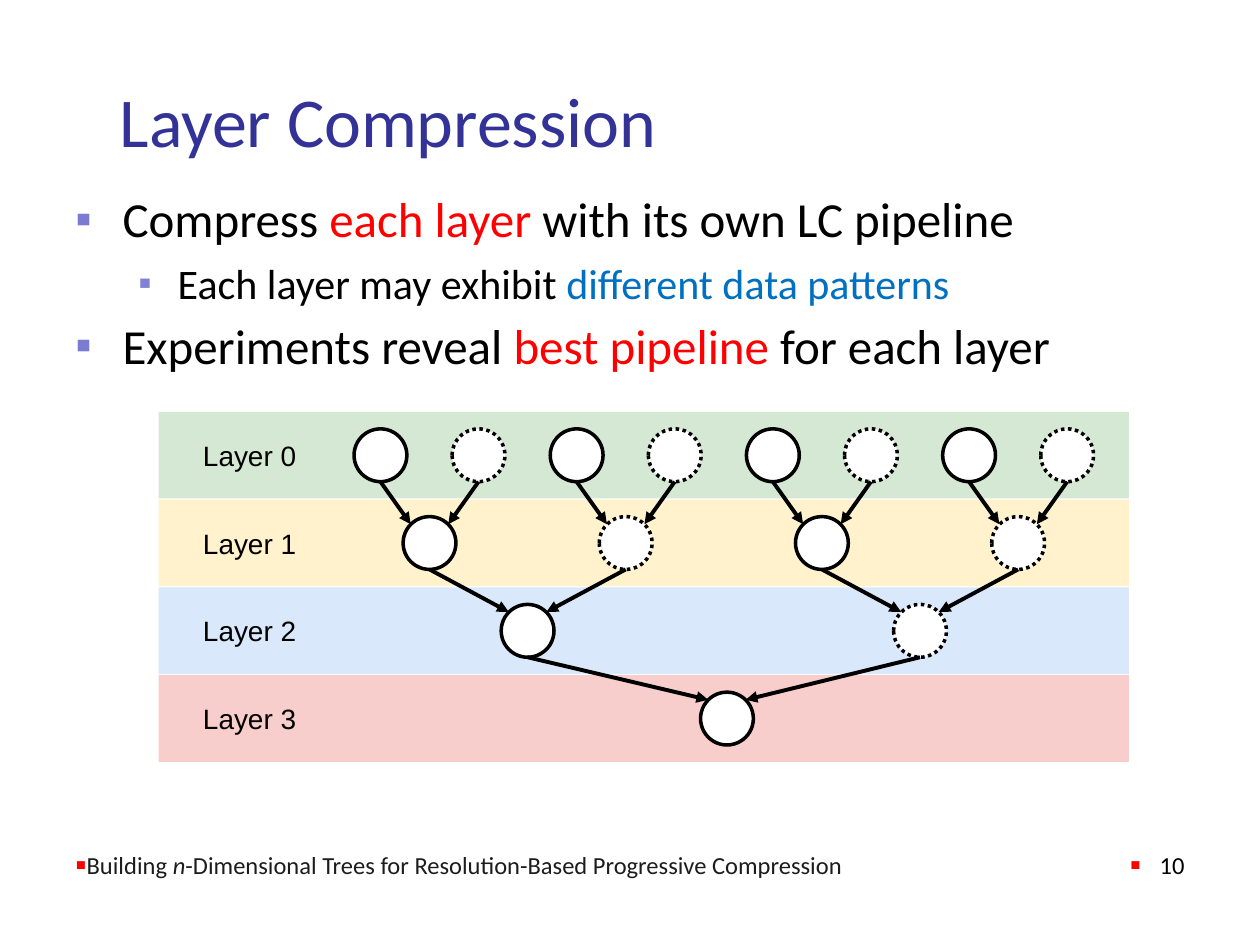
from dataclasses import dataclass

from lxml import etree
from pptx import Presentation
from pptx import util as u
from pptx.dml.color import RGBColor
from pptx.enum import dml, shapes, text
from pptx.oxml import ns
from pptx.slide import Slide

BLACK = RGBColor(0x00, 0x00, 0x00)
WHITE = RGBColor(0xFF, 0xFF, 0xFF)
INDIGO = RGBColor(0x33, 0x33, 0x97)
RED = RGBColor(0xFF, 0x00, 0x00)
BLUE = RGBColor(0x00, 0x70, 0xC0)
CHARCOAL = RGBColor(0x1C, 0x1C, 0x1C)
LAVENDER = RGBColor(0x7B, 0x7B, 0xD1)
LIGHT_LAVENDER = RGBColor(0x82, 0x82, 0xD4)
BAND_COLORS = (
    RGBColor(0xD5, 0xE8, 0xD4),
    RGBColor(0xFF, 0xF2, 0xCC),
    RGBColor(0xDA, 0xE8, 0xFC),
    RGBColor(0xF8, 0xCE, 0xCC),
)

BAND_LEFT, BAND_TOP, BAND_WIDTH, BAND_HEIGHT = 90.7, 235.4, 554.4, 49.5
BAND_PITCH = 50.16
LABEL_LEFT, LABEL_WIDTH = 96.5, 92.2
DIAMETER = 30.2
LEAF_COUNT, FIRST_LEAF, LEAF_PITCH = 8, 217.4, 56.06
ROOT_SHIFT = 1.8


@dataclass
class Canvas:
    slide: Slide
    font: str = "Calibri"
    label_font: str = "Arial"
    outline: float = 2
    arrow: float = 2.25

    def band(self, top, color):
        shape = self.slide.shapes.add_shape(
            shapes.MSO_SHAPE.RECTANGLE,
            u.Pt(BAND_LEFT), u.Pt(top), u.Pt(BAND_WIDTH), u.Pt(BAND_HEIGHT))
        shape.shadow.inherit = False
        shape.fill.solid()
        shape.fill.fore_color.rgb = color
        shape.line.fill.background()

    def node(self, x, y, dotted):
        """Draw a circle centred on (x, y)."""
        shape = self.slide.shapes.add_shape(
            shapes.MSO_SHAPE.OVAL, u.Pt(x - DIAMETER / 2),
            u.Pt(y - DIAMETER / 2), u.Pt(DIAMETER), u.Pt(DIAMETER))
        shape.shadow.inherit = False
        shape.fill.solid()
        shape.fill.fore_color.rgb = WHITE
        shape.line.color.rgb = BLACK
        shape.line.width = u.Pt(self.outline)
        if dotted:
            shape.line.dash_style = dml.MSO_LINE.ROUND_DOT

    def edge(self, child, parent):
        """Draw an arrow from the bottom of a child to its parent's upper rim."""
        side = 1 if child[0] > parent[0] else -1
        diagonal = DIAMETER / 2 * 0.71
        connector = self.slide.shapes.add_connector(
            shapes.MSO_CONNECTOR.STRAIGHT,
            u.Pt(child[0]), u.Pt(child[1] + DIAMETER / 2),
            u.Pt(parent[0] + side * diagonal), u.Pt(parent[1] - diagonal))
        connector.line.color.rgb = BLACK
        connector.line.width = u.Pt(self.arrow)
        properties = connector._element.spPr
        line = properties.find(ns.qn("a:ln"))
        etree.SubElement(line, ns.qn("a:tailEnd"), type="triangle")
        etree.SubElement(properties, ns.qn("a:effectLst"))

    def text_box(self, left, top, width, height, anchor):
        frame = self.slide.shapes.add_textbox(
            u.Pt(left), u.Pt(top), u.Pt(width), u.Pt(height)).text_frame
        frame.word_wrap = True
        frame.vertical_anchor = anchor
        return frame

    def add_runs(self, paragraph, size, *pieces, font=None):
        """Fill a paragraph with (wording, color) pieces."""
        for wording, color in pieces:
            run = paragraph.add_run()
            run.text = wording
            run.font.name = font or self.font
            run.font.size = u.Pt(size)
            run.font.color.rgb = color

    def bullet(self, paragraph, color, percent, margin=0, hanging=0):
        properties = paragraph._p.get_or_add_pPr()
        properties.set("marL", str(u.Pt(margin)))
        properties.set("indent", str(-u.Pt(hanging)))
        fill = etree.SubElement(properties, ns.qn("a:buClr"))
        etree.SubElement(fill, ns.qn("a:srgbClr"), val=str(color))
        etree.SubElement(properties, ns.qn("a:buSzPct"), val=str(percent * 1000))
        etree.SubElement(properties, ns.qn("a:buFont"), typeface=self.label_font)
        etree.SubElement(properties, ns.qn("a:buChar"), char="▪")


def tree_levels():
    """Return node centres per layer, each parent midway between its children."""
    xs = [FIRST_LEAF + i * LEAF_PITCH for i in range(LEAF_COUNT)]
    levels = []
    for layer in range(len(BAND_COLORS)):
        y = BAND_TOP + layer * BAND_PITCH + BAND_HEIGHT / 2
        shift = ROOT_SHIFT if len(xs) == 1 else 0
        levels.append([(x + shift, y) for x in xs])
        xs = [(a + b) / 2 for a, b in zip(xs[::2], xs[1::2])]
    return levels


def add_texts(canvas):
    title = canvas.text_box(36, 43.2, 648, 50.4, text.MSO_ANCHOR.MIDDLE)
    title.margin_left = u.Pt(32.4)
    canvas.add_runs(title.paragraphs[0], 40, ("Layer Compression", INDIGO))

    body = canvas.text_box(36, 104.4, 648, 352.8, text.MSO_ANCHOR.TOP)
    first, second, third = (
        body.paragraphs[0], body.add_paragraph(), body.add_paragraph())
    second.level = 1
    second.space_before, third.space_before = u.Pt(5.6), u.Pt(4.2)
    for paragraph in (first, third):
        canvas.bullet(paragraph, LAVENDER, 95, 27, 27)
    canvas.bullet(second, LIGHT_LAVENDER, 90, 58.5, 22.5)
    canvas.add_runs(first, 28, ("Compress ", BLACK), ("each layer ", RED),
                    ("with its own LC pipeline", BLACK))
    canvas.add_runs(second, 24, ("Each layer may exhibit ", BLACK),
                    ("different data patterns", BLUE))
    canvas.add_runs(third, 28, ("Experiments reveal ", BLACK),
                    ("best pipeline ", RED), ("for each layer", BLACK))

    footer = canvas.text_box(
        36, 470.2, 498.2, 36, text.MSO_ANCHOR.BOTTOM).paragraphs[0]
    canvas.bullet(footer, RED, 130)
    canvas.add_runs(
        footer, 14, ("Building ", CHARCOAL), ("n", CHARCOAL),
        ("-Dimensional Trees for Resolution-Based Progressive Compression",
         CHARCOAL))
    footer.runs[1].font.italic = True

    number = canvas.text_box(
        534.2, 470.2, 149.8, 36, text.MSO_ANCHOR.BOTTOM).paragraphs[0]
    number.alignment = text.PP_ALIGN.RIGHT
    canvas.bullet(number, RED, 130, 17, 17)
    canvas.add_runs(number, 14, ("10", BLACK))


def add_tree(canvas):
    levels = tree_levels()
    for layer, (color, nodes) in enumerate(zip(BAND_COLORS, levels)):
        top = BAND_TOP + layer * BAND_PITCH
        canvas.band(top, color)
        label = canvas.text_box(LABEL_LEFT, top, LABEL_WIDTH, BAND_HEIGHT,
                                text.MSO_ANCHOR.MIDDLE).paragraphs[0]
        label.alignment = text.PP_ALIGN.CENTER
        canvas.add_runs(label, 16, (f"Layer {layer}", BLACK),
                        font=canvas.label_font)
        for i, (x, y) in enumerate(nodes):
            canvas.node(x, y, dotted=i % 2 == 1)
    for children, parents in zip(levels, levels[1:]):
        for i, child in enumerate(children):
            canvas.edge(child, parents[i // 2])


def main():
    presentation = Presentation()
    presentation.slide_width, presentation.slide_height = u.Pt(720), u.Pt(540)
    canvas = Canvas(presentation.slides.add_slide(presentation.slide_layouts[6]))
    add_texts(canvas)
    add_tree(canvas)
    presentation.save("out.pptx")


if __name__ == "__main__":
    main()
